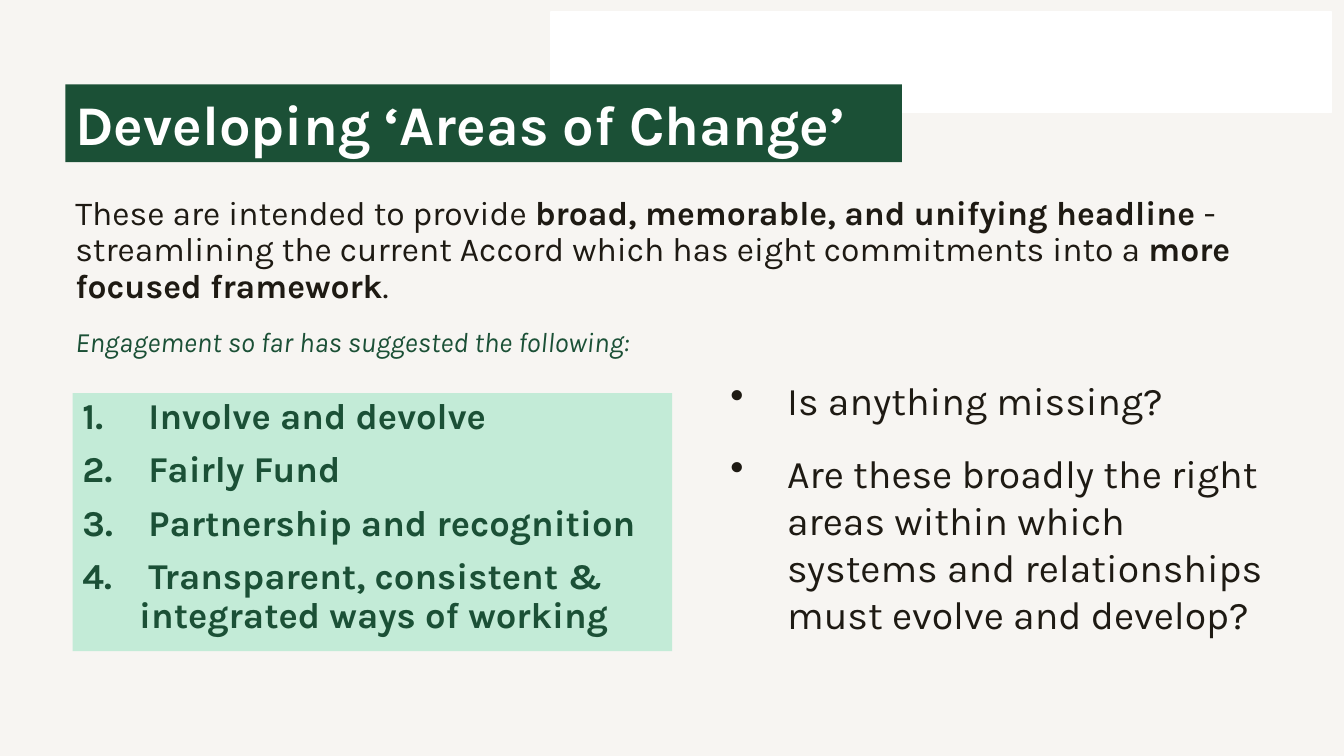
"""Build the 'Areas of Change' slide."""
import pptx
import pptx.dml.color
import pptx.enum.shapes
import pptx.enum.text
import pptx.oxml.ns
import pptx.util
from lxml import etree

Cm, Pt = pptx.util.Cm, pptx.util.Pt
RGB = pptx.dml.color.RGBColor
SHAPE = pptx.enum.shapes.MSO_SHAPE
ANCHOR = pptx.enum.text.MSO_ANCHOR
COLORS = {
    "paper": "F7F5F2",
    "white": "FFFFFF",
    "green": "1B5036",
    "mint": "C3EBD7",
    "ink": "1E1A13",
}


def add_panel(kind, place, fill, anchor=ANCHOR.TOP):
    panel = slide.shapes.add_shape(kind, *[Cm(length) for length in place])
    panel.shadow.inherit = False
    panel.fill.solid()
    panel.fill.fore_color.rgb = RGB.from_string(COLORS[fill])
    panel.line.fill.background()
    panel.text_frame.word_wrap = True
    panel.text_frame.vertical_anchor = anchor
    return panel


def style_paragraph(paragraph, size, color, bold=False, bullet=None):
    paragraph.alignment = pptx.enum.text.PP_ALIGN.LEFT
    if bullet:
        tag, key, value = bullet
        properties = paragraph._p.get_or_add_pPr()
        properties.set("marL", str(Cm(1.43)))
        properties.set("indent", str(-Cm(1.43)))
        etree.SubElement(properties, pptx.oxml.ns.qn(tag)).set(key, value)
    for run in paragraph.runs:
        run.font.name = "Karla"
        run.font.size = Pt(size)
        run.font.bold = bold
        run.font.color.rgb = RGB.from_string(COLORS[color])


deck = pptx.Presentation()
deck.slide_width, deck.slide_height = Cm(33.87), Cm(19.05)
slide = deck.slides.add_slide(deck.slide_layouts[6])
slide.background.fill.solid()
slide.background.fill.fore_color.rgb = RGB.from_string(COLORS["paper"])

corner_band = add_panel(SHAPE.RECTANGLE, (13.89, 0.3, 19.66, 2.54), "white")
corner_band.line.color.rgb = RGB.from_string(COLORS["white"])
corner_band.line.width = Pt(1)

intro = slide.shapes.add_textbox(Cm(1.65), Cm(4.83), Cm(30.02), Cm(12.09)).text_frame
intro.word_wrap = True
purpose = intro.paragraphs[0]
purpose_parts = [
    "These are intended to provide ",
    "broad, memorable, and unifying headline ",
    "- streamlining the current Accord which has eight commitments into a ",
    "more focused framework",
    ".",
]
for part in purpose_parts:
    purpose.add_run().text = part
style_paragraph(purpose, 24, "ink")
for emphasis in purpose.runs[1::2]:
    emphasis.font.bold = True
engagement = intro.add_paragraph()
engagement.text = "Engagement so far has suggested the following:"
style_paragraph(engagement, 20, "green")
engagement.runs[0].font.italic = True
engagement.space_before = Pt(10)
for paragraph in intro.paragraphs:
    paragraph.line_spacing = 0.9
    paragraph.space_after = Pt(6)

areas = add_panel(SHAPE.RECTANGLE, (1.83, 9.91, 15.11, 6.5), "mint").text_frame
areas.text = "\n".join([
    " Involve and devolve",
    " Fairly Fund",
    " Partnership and recognition",
    " Transparent, consistent & integrated ways of working",
])
for number, area in enumerate(areas.paragraphs):
    style_paragraph(area, 26, "green", True, ("a:buAutoNum", "type", "arabicPeriod"))
    area.line_spacing = 0.9
    area.space_before = Pt(10 if number else 0)

title = add_panel(SHAPE.RECTANGLE, (1.65, 2.13, 21.08, 1.96), "green").text_frame
title.auto_size = pptx.enum.text.MSO_AUTO_SIZE.SHAPE_TO_FIT_TEXT
title.text = "Developing ‘Areas of Change’"
style_paragraph(title.paragraphs[0], 40, "white", True)

questions = add_panel(
    SHAPE.ROUNDED_RECTANGLE, (17.78, 8.89, 15.11, 7.77), "paper", ANCHOR.MIDDLE
).text_frame
questions.text = "\n".join([
    "Is anything missing?",
    "Are these broadly the right areas within which systems and relationships "
    "must evolve and develop?",
])
for question in questions.paragraphs:
    style_paragraph(question, 28, "ink", bullet=("a:buChar", "char", "•"))
    question.space_after = Pt(18)

deck.save("out.pptx")
